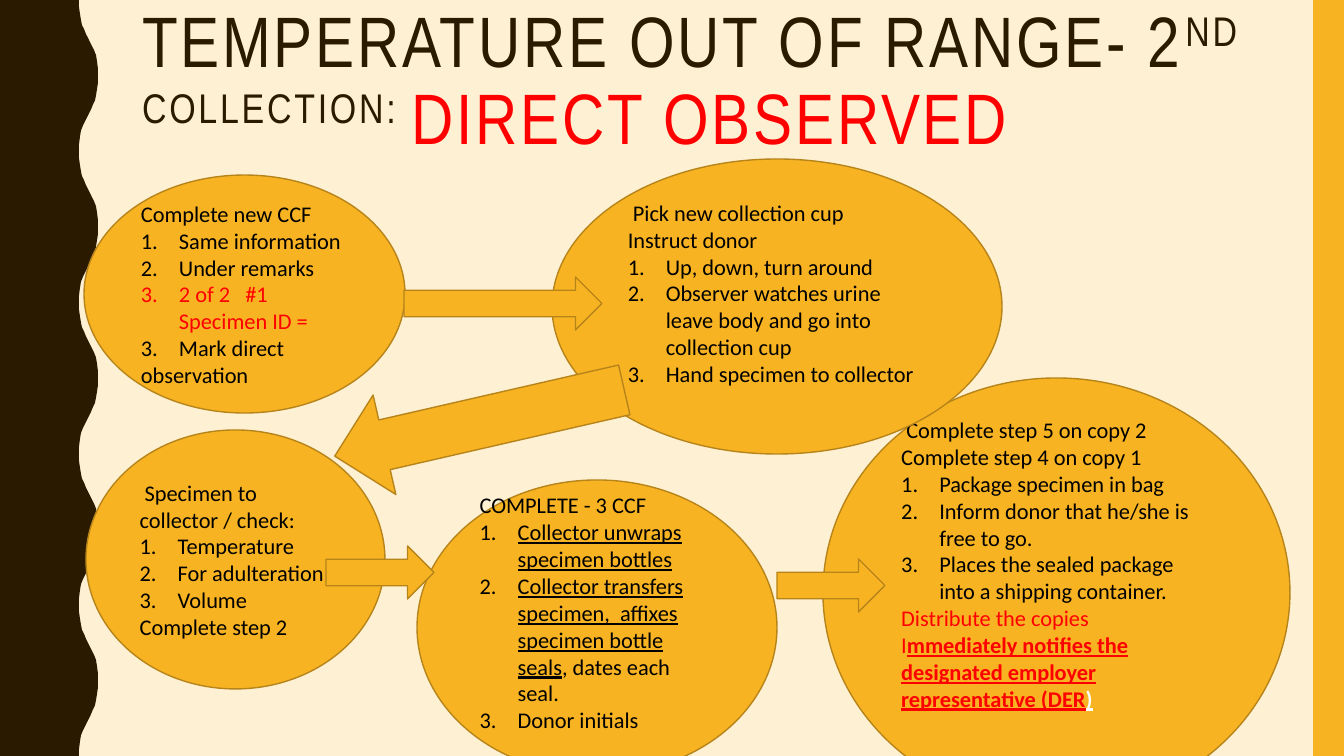
from dataclasses import dataclass
from typing import Any

from lxml import etree
from pptx import Presentation
from pptx import util as u
from pptx.dml.color import RGBColor
from pptx.enum import shapes, text
from pptx.oxml import ns

SCALE = 914400 / 100.8
WIDE, HIGH = 1344, 756
BLACK = RGBColor(0, 0, 0)
WHITE = RGBColor(0xFF, 0xFF, 0xFF)
RED = RGBColor(0xFF, 0, 0)
DARK = RGBColor(0x2A, 0x1A, 0)
CREAM = RGBColor(0xFE, 0xF0, 0xD3)
GOLD = RGBColor(0xF8, 0xB3, 0x23)
BROWN = RGBColor(0xB7, 0x84, 0x1A)
INDENT = 38
CREST = 19
WAVE = ((0, 0), (0, 7), (1, 14), (2, 20), (3, 25), (5, 29), (7, 34),
        (9, 38), (11, 42), (13, 46), (15, 50), (17, 55), (18, 61), (19, 69))


@dataclass(frozen=True)
class Run:
    words: str
    color: RGBColor = BLACK
    bold: bool = False
    under: bool = False


@dataclass(frozen=True)
class Line:
    runs: tuple[Run, ...]
    item: bool = False
    tab: bool = False


@dataclass(frozen=True)
class Step:
    box: tuple[int, int, int, int]
    lines: tuple[Line, ...]
    foot: int = 5


@dataclass(frozen=True)
class Arrow:
    box: tuple[int, int, int, int]
    turn: float = 0


def plain(words: str, color: RGBColor = BLACK) -> Line:
    return Line((Run(words, color),))


def item(words: str, color: RGBColor = BLACK) -> Line:
    return Line((Run(words, color),), item=True)


STEPS = (
    Step((84, 175, 321, 238), (
        plain("Complete new CCF"),
        item("Same information"),
        item("Under remarks"),
        item("2 of 2   #1 Specimen ID =", RED),
        Line((Run("3.\tMark direct observation"),), tab=True))),
    Step((823, 378, 467, 429), (
        plain(" Complete step 5 on copy 2"),
        plain("Complete step 4 on copy 1"),
        item("Package specimen in bag"),
        item("Inform donor that he/she is free to go."),
        item("Places the sealed package into a shipping container."),
        plain("Distribute the copies", RED),
        Line((Run("I", RED),
              Run("mmediately notifies the designated employer representative (DER", RED, True, True),
              Run(")", WHITE, True, True)))), 62),
    Step((417, 480, 360, 295), (
        plain("COMPLETE - 3 CCF"),
        Line((Run("Collector unwraps specimen bottles", under=True),), item=True),
        Line((Run("Collector transfers specimen,  affixes specimen bottle seals", under=True),
              Run(", dates each seal.")), item=True),
        item("Donor initials")), 35),
    Step((86, 430, 299, 259), (
        plain(" Specimen to collector / check:"),
        item("Temperature"),
        item("For adulteration"),
        item("Volume"),
        plain("Complete step 2"))),
    Step((552, 159, 450, 295), (
        plain(" Pick new collection cup"),
        plain("Instruct donor"),
        item("Up, down, turn around"),
        item("Observer watches urine leave body and go into collection cup"),
        item("Hand specimen to collector")), 32),
)

ARROWS = (
    Arrow((404, 277, 198, 53)),
    Arrow((326, 546, 108, 53)),
    Arrow((777, 559, 108, 53)),
    Arrow((331, 372, 297, 102), 167.1),
)


def px(size: float) -> u.Emu:
    return u.Emu(round(size * SCALE))


def dress(target: Any, values: dict[str, Any]) -> None:
    for key, value in values.items():
        setattr(target, key, value)


def paint(shape: Any, fill: RGBColor, edge: RGBColor | None = None) -> None:
    shape.shadow.inherit = False
    shape.fill.solid()
    shape.fill.fore_color.rgb = fill
    if edge is None:
        shape.line.fill.background()
    else:
        shape.line.color.rgb = edge
        shape.line.width = u.Pt(1)


def place(slide: Any, kind: Any, box: tuple[int, int, int, int]) -> Any:
    return slide.shapes.add_shape(kind, *map(px, box))


def add_run(para: Any, run: Run, values: dict[str, Any]) -> Any:
    part = para.add_run()
    part.text = run.words
    dress(part.font, {"bold": run.bold, "underline": run.under, **values})
    part.font.color.rgb = run.color
    return part


def indent(para: Any, line: Line) -> None:
    props = para._p.get_or_add_pPr()
    if line.item:
        props.set("marL", str(px(INDENT)))
        props.set("indent", str(-px(INDENT)))
        etree.SubElement(props, ns.qn("a:buAutoNum"), type="arabicPeriod")
    if line.tab:
        tabs = etree.SubElement(props, ns.qn("a:tabLst"))
        etree.SubElement(tabs, ns.qn("a:tab"), pos=str(px(INDENT)), algn="l")


def draw_step(slide: Any, step: Step) -> None:
    oval = place(slide, shapes.MSO_SHAPE.OVAL, step.box)
    paint(oval, GOLD, BROWN)
    frame = oval.text_frame
    dress(frame, {"word_wrap": True, "vertical_anchor": text.MSO_ANCHOR.MIDDLE,
                  "margin_bottom": px(step.foot)})
    for rank, line in enumerate(step.lines):
        para = frame.add_paragraph() if rank else frame.paragraphs[0]
        para.alignment = text.PP_ALIGN.LEFT
        indent(para, line)
        for run in line.runs:
            add_run(para, run, {"name": "Calibri", "size": u.Pt(16)})


def draw_arrow(slide: Any, arrow: Arrow) -> None:
    shape = place(slide, shapes.MSO_SHAPE.RIGHT_ARROW, arrow.box)
    shape.rotation = arrow.turn
    paint(shape, GOLD, BROWN)


def draw_wave(slide: Any) -> None:
    half, near = HIGH / 10, 79
    points = [(near + (CREST - dx if turn % 2 else dx), turn * half + dy)
              for turn in range(10) for dx, dy in WAVE]
    points += [(near, HIGH), (0, HIGH)]
    form = slide.shapes.build_freeform(0, 0, scale=1.0)
    form.add_line_segments([(px(x), px(y)) for x, y in points], close=True)
    paint(form.convert_to_shape(), DARK)


def draw_title(slide: Any) -> None:
    title = slide.shapes.title
    dress(title, {"left": px(132), "top": px(1), "width": px(1121), "height": px(164)})
    frame = title.text_frame
    dress(frame, {"word_wrap": True, "auto_size": text.MSO_AUTO_SIZE.NONE,
                  "vertical_anchor": text.MSO_ANCHOR.MIDDLE})
    para = frame.paragraphs[0]
    dress(para, {"alignment": text.PP_ALIGN.LEFT, "line_spacing": 0.9})
    for words, color, base in (("TEMPERATURE OUT OF RANGE- 2", DARK, 0),
                               ("ND COLLECTION: ", DARK, 30000),
                               ("DIRECT OBSERVED", RED, 0)):
        part = add_run(para, Run(words, color), {"name": "Arial Narrow", "size": u.Pt(51)})
        props = part._r.get_or_add_rPr()
        props.set("spc", "200")
        props.set("baseline", str(base))


def main() -> None:
    deck = Presentation()
    dress(deck, {"slide_width": px(WIDE), "slide_height": px(HIGH)})
    slide = deck.slides.add_slide(deck.slide_layouts[5])
    back = slide.background.fill
    back.solid()
    back.fore_color.rgb = CREAM
    draw_wave(slide)
    paint(place(slide, shapes.MSO_SHAPE.RECTANGLE, (1313, 0, 31, HIGH)), GOLD)
    draw_title(slide)
    for step in STEPS:
        draw_step(slide, step)
    for arrow in ARROWS:
        draw_arrow(slide, arrow)
    deck.save("out.pptx")


if __name__ == "__main__":
    main()
